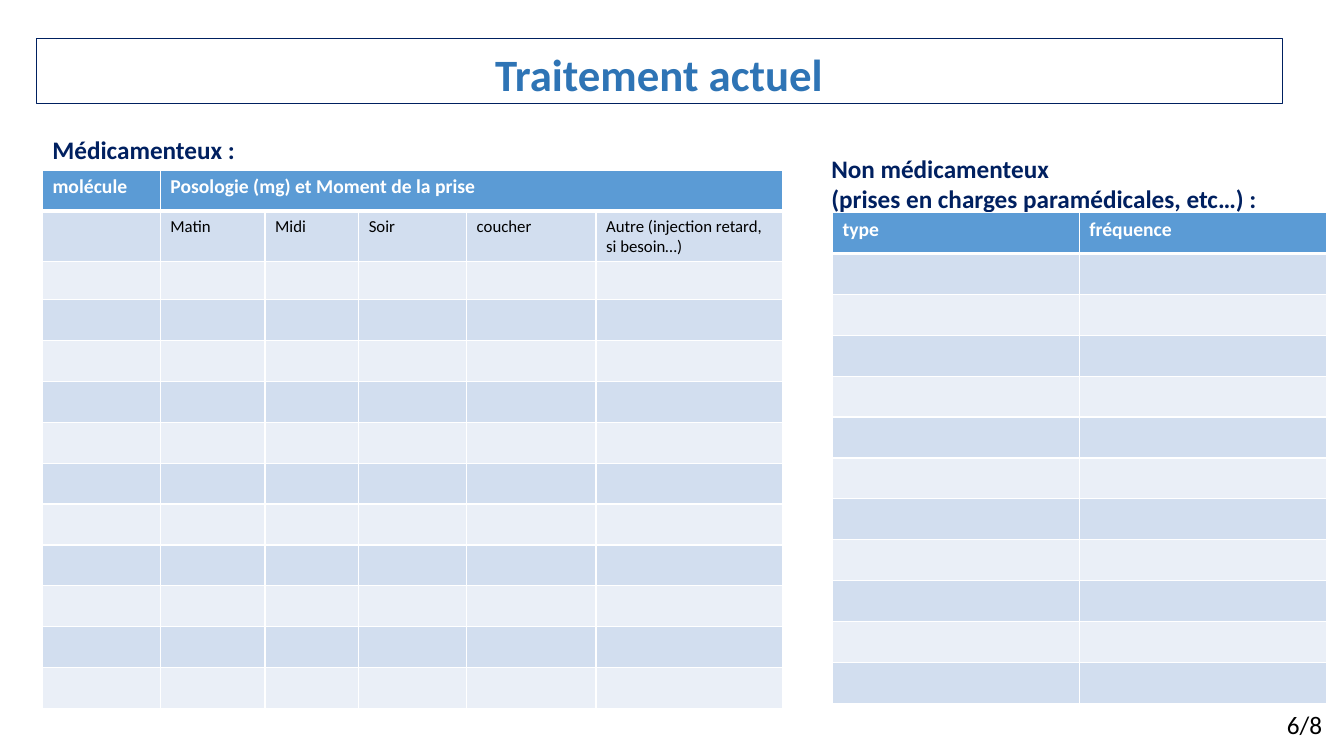
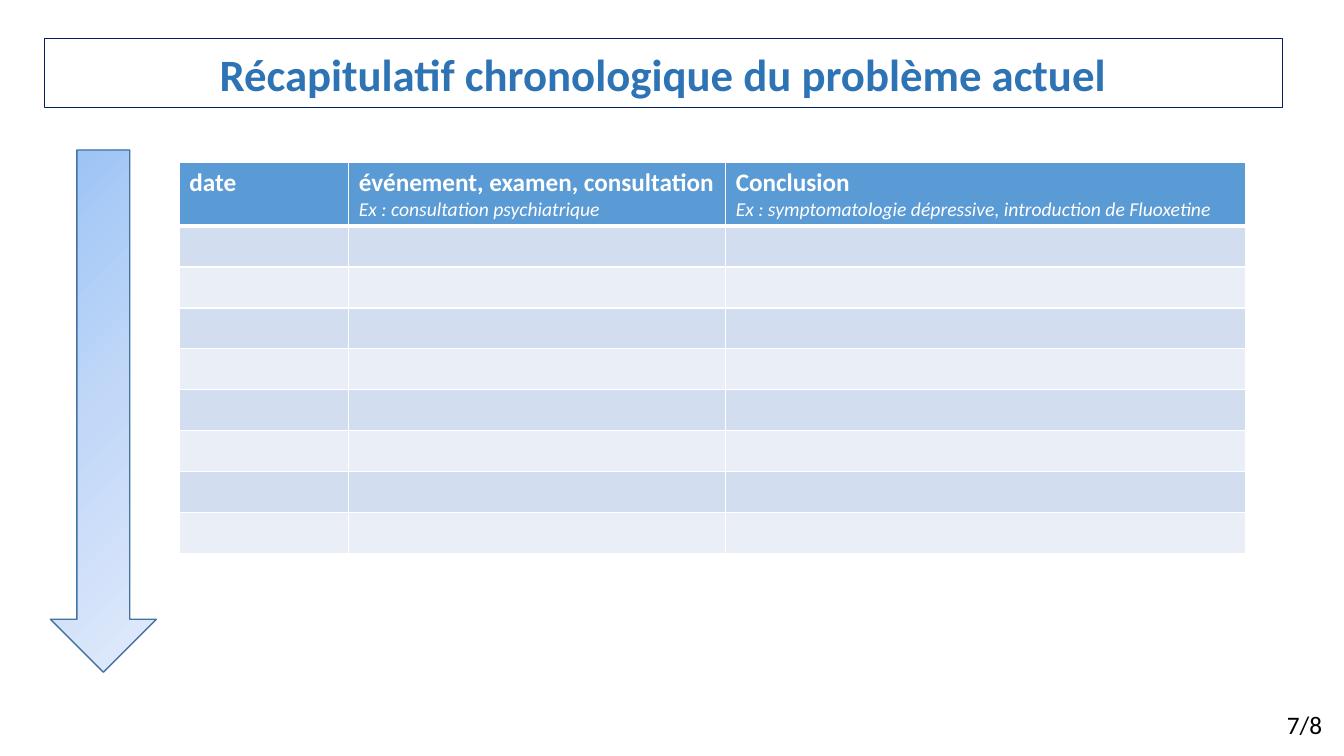
"""Build two slides of a patient file: current treatment and history."""
from dataclasses import dataclass, field

from lxml import etree
from pptx import Presentation
from pptx.dml.color import RGBColor
from pptx.enum.shapes import MSO_SHAPE
from pptx.enum.text import MSO_ANCHOR, MSO_AUTO_SIZE, PP_ALIGN
from pptx.oxml.ns import qn
from pptx.slide import Slide
from pptx.text.text import TextFrame
from pptx.util import Cm, Pt

RECT = MSO_SHAPE.RECTANGLE
ARROW = MSO_SHAPE.DOWN_ARROW
TOP = MSO_ANCHOR.TOP
GROW = MSO_AUTO_SIZE.SHAPE_TO_FIT_TEXT
LEFT = PP_ALIGN.LEFT
CENTER = PP_ALIGN.CENTER


@dataclass(frozen=True)
class Style:
    size: int
    color: str
    bold: bool = False
    italic: bool = False


@dataclass(frozen=True)
class Theme:
    face: str = "Calibri"
    navy: str = "002060"
    rule: str = "FFFFFF"
    head: str = "5B9BD5"
    bands: tuple[str, str] = ("D2DEEF", "EAEFF7")
    edge: str = "43739E"
    fade: tuple[tuple[int, str], ...] = ((0, "9AC3F5"), (50, "C2D8F8"), (100, "E1EBFB"))
    title: Style = Style(32, "2E74B5", True)
    label: Style = Style(18, "002060", True)
    page: Style = Style(18, "000000")
    column: Style = Style(14, "FFFFFF", True)
    lead: Style = Style(18, "FFFFFF", True)
    hint: Style = Style(14, "FFFFFF", False, True)
    body: Style = Style(12, "000000")


THEME = Theme()
Line = tuple[str, Style]


@dataclass(frozen=True)
class Box:
    left: float
    top: float
    width: float
    height: float

    def place(self) -> tuple[Cm, Cm, Cm, Cm]:
        return Cm(self.left), Cm(self.top), Cm(self.width), Cm(self.height)


@dataclass(frozen=True)
class Grid:
    left: float
    top: float
    cols: tuple[float, ...]
    count: int
    text: dict[tuple[int, int], list[Line]]
    row: float = 1.03
    tall: dict[int, float] = field(default_factory=dict)
    spans: tuple[tuple[int, int, int], ...] = ()


def write(frame: TextFrame, lines: list[Line], align: PP_ALIGN = LEFT) -> None:
    for at, (text, style) in enumerate(lines):
        para = frame.add_paragraph() if at else frame.paragraphs[0]
        para.text = text
        para.alignment = align
        font = para.font
        font.name = THEME.face
        font.size = Pt(style.size)
        font.bold = style.bold
        font.italic = style.italic
        font.color.rgb = RGBColor.from_string(style.color)


def add_text(slide: Slide, box: Box, lines: list[Line]) -> None:
    frame = slide.shapes.add_textbox(*box.place()).text_frame
    frame.word_wrap = True
    frame.auto_size = GROW
    write(frame, lines)


def add_frame(slide: Slide, title: str, left: float, height: float, page: str) -> None:
    box = Box(left, 0.97, 32.31 - left, height)
    shape = slide.shapes.add_shape(RECT, *box.place())
    shape.shadow.inherit = False
    shape.fill.background()
    shape.line.color.rgb = RGBColor.from_string(THEME.navy)
    shape.line.width = Pt(0.75)
    frame = shape.text_frame
    frame.word_wrap = True
    frame.auto_size = GROW
    frame.vertical_anchor = TOP
    write(frame, [(title, THEME.title)], CENTER)
    para = frame.paragraphs[0]
    para.line_spacing = 1.07
    para.space_before = Pt(12)
    add_text(slide, Box(32.18, 17.75, 1.68, 1.02), [(page, THEME.page)])


def add_color(parent: etree._Element, color: str) -> None:
    etree.SubElement(parent, qn("a:srgbClr"), val=color)


def add_edges(props: etree._Element, row: int) -> None:
    thick = {"T": 3 if row == 1 else 1, "B": 3 if row == 0 else 1}
    for side in "LRTB":
        width = str(Pt(thick.get(side, 1)))
        edge = etree.SubElement(props, qn(f"a:ln{side}"), w=width)
        add_color(etree.SubElement(edge, qn("a:solidFill")), THEME.rule)


def add_grid(slide: Slide, grid: Grid) -> None:
    rows = [grid.tall.get(at, grid.row) for at in range(grid.count)]
    box = Box(grid.left, grid.top, sum(grid.cols), sum(rows))
    table = slide.shapes.add_table(grid.count, len(grid.cols), *box.place()).table
    for col, width in zip(table.columns, grid.cols):
        col.width = Cm(width)
    for at, high in enumerate(rows):
        table.rows[at].height = Cm(high)
        tint = THEME.bands[(at - 1) % 2] if at else THEME.head
        for col in range(len(grid.cols)):
            cell = table.cell(at, col)
            add_edges(cell._tc.get_or_add_tcPr(), at)
            cell.fill.solid()
            cell.fill.fore_color.rgb = RGBColor.from_string(tint)
            write(cell.text_frame, grid.text.get((at, col), [("", THEME.body)]))
    for row, first, last in grid.spans:
        table.cell(row, first).merge(table.cell(row, last))


def add_arrow(slide: Slide, box: Box) -> None:
    shape = slide.shapes.add_shape(ARROW, *box.place())
    shape.shadow.inherit = False
    shape.line.color.rgb = RGBColor.from_string(THEME.edge)
    shape.line.width = Pt(1)
    shape.fill.gradient()
    shape.fill.gradient_angle = 315
    stops = shape._element.spPr.find(qn("a:gradFill")).find(qn("a:gsLst"))
    for stop in list(stops):
        stops.remove(stop)
    for part, color in THEME.fade:
        add_color(etree.SubElement(stops, qn("a:gs"), pos=str(part * 1000)), color)


def add_care(slide: Slide) -> None:
    add_frame(slide, "Traitement actuel", 0.91, 1.65, "6/8")
    add_text(slide, Box(1.07, 3.25, 18.65, 1.02), [("Médicamenteux :", THEME.label)])
    add_text(slide, Box(20.7, 3.73, 12.9, 1.8), [
        ("Non médicamenteux", THEME.label),
        ("(prises en charges paramédicales, etc…) :", THEME.label),
    ])
    kinds = {(0, at): [(name, THEME.column)] for at, name in enumerate(("type", "fréquence"))}
    add_grid(slide, Grid(20.98, 5.36, (6.22, 6.22), 12, kinds))
    heads = ("molécule", "Posologie (mg) et Moment de la prise")
    times = ("Matin", "Midi", "Soir", "coucher", "Autre (injection retard, si besoin…)")
    doses = {(0, at): [(name, THEME.column)] for at, name in enumerate(heads)}
    doses |= {(1, at): [(name, THEME.body)] for at, name in enumerate(times, 1)}
    cols = (2.97, 2.64, 2.36, 2.72, 3.26, 4.7)
    add_grid(slide, Grid(1.07, 4.29, cols, 13, doses,
                         tall={1: 1.27, 2: 0.96}, spans=((0, 1, 5),)))


def add_past(slide: Slide) -> None:
    add_frame(slide, "Récapitulatif chronologique du problème actuel", 1.12, 1.73, "7/8")
    add_arrow(slide, Box(1.27, 3.78, 2.67, 13.16))
    heads = {
        (0, 0): [("date", THEME.lead)],
        (0, 1): [("événement, examen, consultation", THEME.lead),
                 ("Ex : consultation psychiatrique", THEME.hint)],
        (0, 2): [("Conclusion", THEME.lead),
                 ("Ex : symptomatologie dépressive, introduction de Fluoxetine", THEME.hint)],
    }
    add_grid(slide, Grid(4.52, 4.09, (4.27, 9.5, 13.11), 9, heads, tall={0: 1.6}))


def main() -> None:
    deck = Presentation()
    deck.slide_width = Cm(33.87)
    deck.slide_height = Cm(19.05)
    for draw in (add_care, add_past):
        draw(deck.slides.add_slide(deck.slide_layouts[6]))
    deck.save("out.pptx")


if __name__ == "__main__":
    main()
